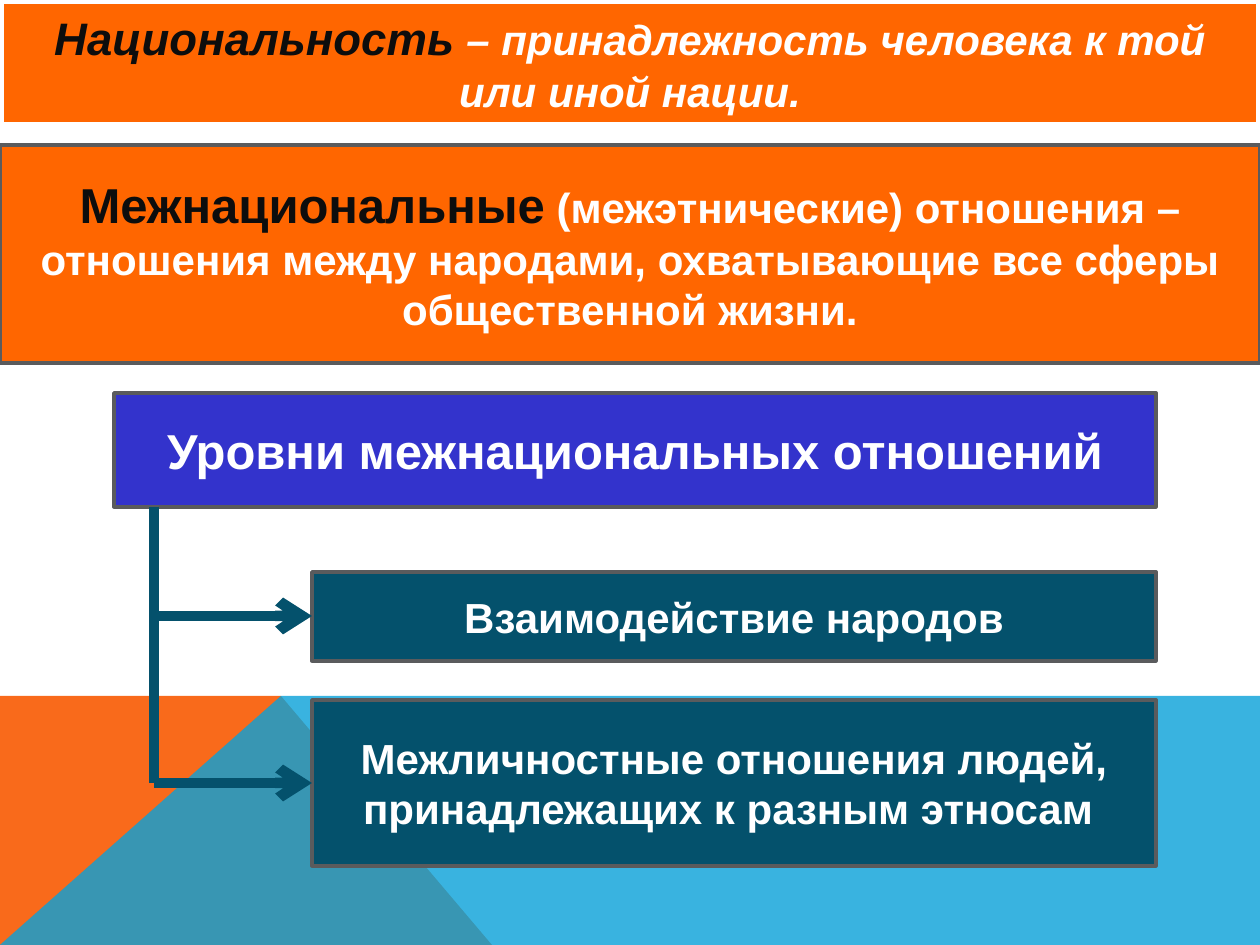
from lxml import etree
from pptx import Presentation
from pptx import util as u
from pptx.dml.color import RGBColor
from pptx.enum import shapes, text
from pptx.oxml.ns import qn

PX_PER_INCH = 126
COLORS = {
    "orange": "FF6600", "corner": "F96A1B", "sky": "08A1D9",
    "violet": "3333CC", "teal": "04516C", "frame": "5A5B5D",
    "white": "FFFFFF", "black": "0D0D0D",
}


def px(length):
    return u.Inches(length / PX_PER_INCH)


def color(name):
    return RGBColor.from_string(COLORS[name])


class SlideBuilder:
    font = "Arial"

    def __init__(self, page):
        self.page = page

    def polygon(self, points, fill, opacity=None):
        """Draw a closed outline; opacity is a percentage."""
        start, *rest = [(px(x), px(y)) for x, y in points]
        builder = self.page.shapes.build_freeform(*start)
        builder.add_line_segments(rest, close=True)
        outline = builder.convert_to_shape()
        outline.shadow.inherit = False
        outline.fill.solid()
        outline.fill.fore_color.rgb = color(fill)
        outline.line.fill.background()
        if opacity is not None:
            tint = outline._element.spPr.find(qn("a:solidFill"))[0]
            etree.SubElement(tint, qn("a:alpha"), val=str(opacity * 1000))

    def box(self, place, fill, spans, frame="frame", frame_width=2, italic=False):
        """Draw a framed box; spans are (words, size, color)."""
        box = self.page.shapes.add_shape(
            shapes.MSO_SHAPE.RECTANGLE, *[px(length) for length in place])
        box.shadow.inherit = False
        box.fill.solid()
        box.fill.fore_color.rgb = color(fill)
        box.line.color.rgb = color(frame)
        box.line.width = u.Pt(frame_width)
        box.text_frame.word_wrap = True
        box.text_frame.vertical_anchor = text.MSO_ANCHOR.MIDDLE
        para = box.text_frame.paragraphs[0]
        para.alignment = text.PP_ALIGN.CENTER
        for words, size, ink in spans:
            span = para.add_run()
            span.text = words
            span.font.name = self.font
            span.font.size = u.Pt(size)
            span.font.bold = True
            span.font.italic = italic
            span.font.color.rgb = color(ink)

    def line(self, start, end, arrow=False):
        line = self.page.shapes.add_connector(
            shapes.MSO_CONNECTOR.STRAIGHT, *[px(length) for length in start + end])
        line.line.color.rgb = color("teal")
        line.line.width = u.Pt(6)
        if arrow:
            etree.SubElement(line.line._get_or_add_ln(), qn("a:tailEnd"), type="arrow")
        etree.SubElement(line._element.spPr, qn("a:effectLst"))


def main():
    deck = Presentation()
    deck.slide_width, deck.slide_height = px(1260), px(945)
    slide = SlideBuilder(deck.slides.add_slide(deck.slide_layouts[6]))

    slide.polygon([(0, 945), (0, 696), (281, 696), (492, 945)], "corner")
    slide.polygon([(0, 945), (281, 696), (1260, 696), (1260, 945)], "sky", opacity=80)

    slide.box((0, 0, 1260, 126), "orange", [
        ("Национальность", 26, "black"),
        (" – принадлежность человека к той или иной нации.", 24, "white"),
    ], frame="white", frame_width=4.5, italic=True)
    slide.box((0, 145, 1260, 218), "orange", [
        ("Межнациональные", 28, "black"),
        (" (межэтнические) отношения – отношения между народами, "
         "охватывающие все сферы общественной жизни.", 24, "white"),
    ])
    slide.box((114, 393, 1042, 114), "violet",
              [("Уровни межнациональных отношений", 28, "white")])

    trunk, level_left = 154, 312
    levels = [
        (572, 89, "Взаимодействие народов"),
        (700, 166, "Межличностные отношения людей, принадлежащих к разным этносам "),
    ]
    for top, height, words in levels:
        slide.box((level_left, top, 844, height), "teal", [(words, 24, "white")])

    middles = [top + height // 2 for top, height, _ in levels]
    slide.line((trunk, 507), (trunk, middles[-1]))
    for middle in middles:
        slide.line((trunk, middle), (level_left, middle), arrow=True)

    deck.save("out.pptx")


if __name__ == "__main__":
    main()
